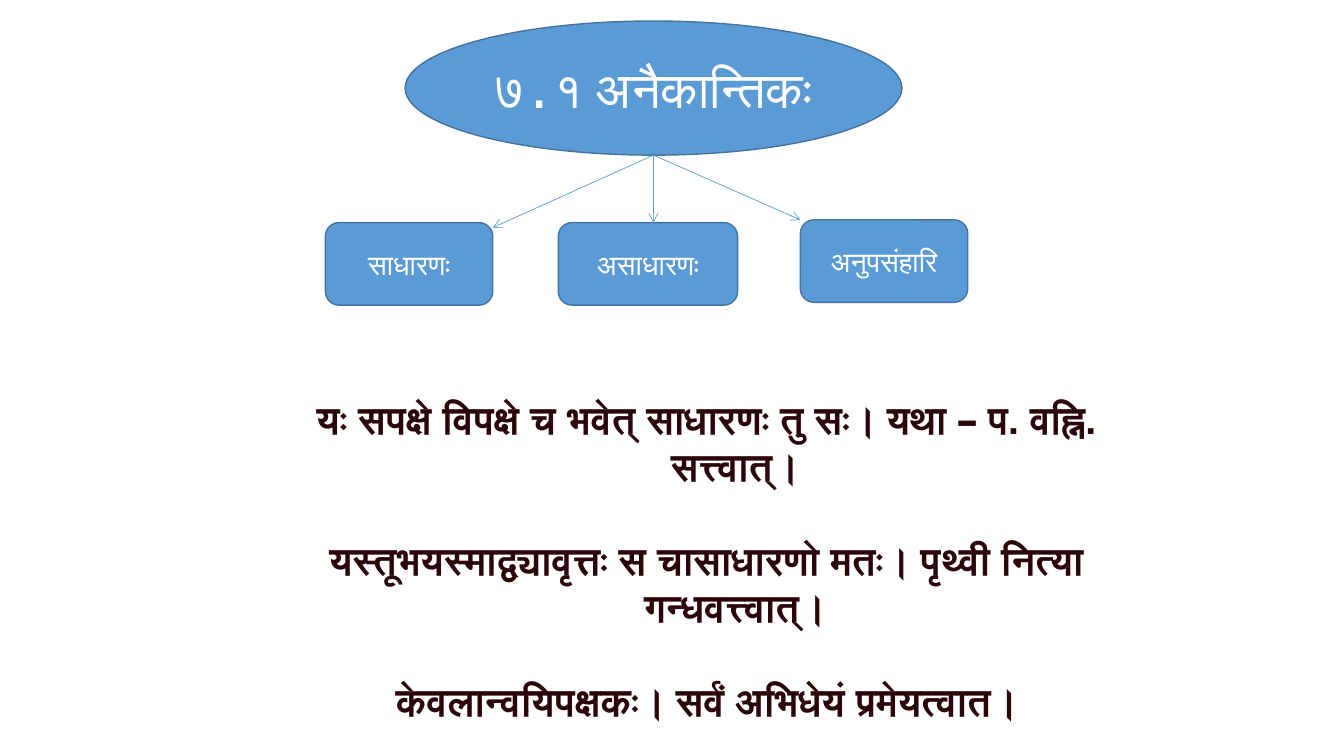
from dataclasses import dataclass

from lxml import etree
from pptx import Presentation
from pptx.dml.color import RGBColor
from pptx.enum.shapes import MSO_CONNECTOR, MSO_SHAPE
from pptx.enum.text import MSO_ANCHOR, MSO_AUTO_SIZE, PP_ALIGN
from pptx.oxml.ns import qn
from pptx.util import Cm, Pt

ELLIPSE = MSO_SHAPE.OVAL
ROUNDED = MSO_SHAPE.ROUNDED_RECTANGLE
STRAIGHT = MSO_CONNECTOR.STRAIGHT
MIDDLE = MSO_ANCHOR.MIDDLE
GROW = MSO_AUTO_SIZE.SHAPE_TO_FIT_TEXT
CENTER = PP_ALIGN.CENTER


@dataclass(frozen=True)
class Theme:
    node_fill: RGBColor = RGBColor(0x5B, 0x9B, 0xD5)
    node_line: RGBColor = RGBColor(0x43, 0x73, 0x9E)
    node_text: RGBColor = RGBColor(0xFF, 0xFF, 0xFF)
    definition_text: RGBColor = RGBColor(0x2B, 0x05, 0x09)
    node_font: str = "DejaVu Sans Mono"
    definition_font: str = "Arial"
    topic_size: Pt = Pt(36)
    kind_size: Pt = Pt(20)
    definition_size: Pt = Pt(28)
    definition_gap: Pt = Pt(33.6)
    node_width: Pt = Pt(1)
    arrow_width: Pt = Pt(0.5)


THEME = Theme()

TOPIC = "७.१ अनैकान्तिकः"
KINDS = [
    ("साधारणः", (0, 5.08, 4.22, 2.08), (1, 0.06)),
    ("असाधारणः", (5.87, 5.08, 4.52, 2.08), (0.53, 0)),
    ("अनुपसंहारि", (11.97, 5.01, 4.22, 2.08), (0, 0)),
]
DEFINITIONS = [
    "यः सपक्षे विपक्षे च भवेत् साधारणः तु सः। यथा – प. वह्नि. सत्त्वात्।",
    "यस्तूभयस्माद्व्यावृत्तः स चासाधारणो मतः। पृथ्वी नित्या गन्धवत्त्वात्।",
    "केवलान्वयिपक्षकः। सर्वं अभिधेयं प्रमेयत्वात।",
]


def style_font(paragraph, name, size, color, bold=False):
    font = paragraph.runs[0].font
    font.name, font.size, font.bold = name, size, bold
    font.color.rgb = color


def add_node(slide, outline, box, label, size):
    node = slide.shapes.add_shape(outline, *map(Cm, box))
    node.shadow.inherit = False
    node.fill.solid()
    node.fill.fore_color.rgb = THEME.node_fill
    node.line.color.rgb = THEME.node_line
    node.line.width = THEME.node_width
    frame = node.text_frame
    frame.text = label
    frame.vertical_anchor = MIDDLE
    frame.paragraphs[0].alignment = CENTER
    style_font(frame.paragraphs[0], THEME.node_font, size, THEME.node_text)


def add_arrow(slide, start, end):
    arrow = slide.shapes.add_connector(STRAIGHT, *map(Cm, start + end))
    arrow.line.color.rgb = THEME.node_fill
    arrow.line.width = THEME.arrow_width
    etree.SubElement(arrow.line._get_or_add_ln(), qn("a:tailEnd"), type="arrow")
    etree.SubElement(arrow._element.spPr, qn("a:effectLst"))


def add_kinds_tree(slide, left, top):
    topic_left, topic_width, topic_height = left + 2.01, 12.52, 3.38
    add_node(slide, ELLIPSE, (topic_left, top, topic_width, topic_height),
             TOPIC, THEME.topic_size)
    root = (topic_left + topic_width / 2, top + topic_height)
    for kind, (dx, dy, width, height), (across, down) in KINDS:
        x, y = left + dx, top + dy
        add_node(slide, ROUNDED, (x, y, width, height), kind, THEME.kind_size)
        add_arrow(slide, root, (x + across * width, y + down * height))


def add_definitions(slide, left, top, width, height):
    frame = slide.shapes.add_textbox(*map(Cm, (left, top, width, height))).text_frame
    frame.word_wrap = True
    frame.auto_size = GROW
    frame.text = "\n".join(DEFINITIONS)
    for definition in frame.paragraphs:
        definition.alignment = CENTER
        if definition.text != DEFINITIONS[-1]:
            definition.space_after = THEME.definition_gap
        style_font(definition, THEME.definition_font, THEME.definition_size,
                   THEME.definition_text, bold=True)
        properties = definition._p.get_or_add_pPr()
        properties.set("marL", str(Cm(1.43)))
        properties.set("indent", str(Cm(-1.43)))
        etree.SubElement(properties, qn("a:buAutoNum"), type="hindiNumPeriod")


def main():
    deck = Presentation()
    deck.slide_width, deck.slide_height = Cm(33.87), Cm(19.05)
    slide = deck.slides.add_slide(deck.slide_layouts[6])
    add_definitions(slide, 6.63, 9.83, 22.35, 6.25)
    add_kinds_tree(slide, 8.2, 0.53)
    deck.save("out.pptx")


if __name__ == "__main__":
    main()
